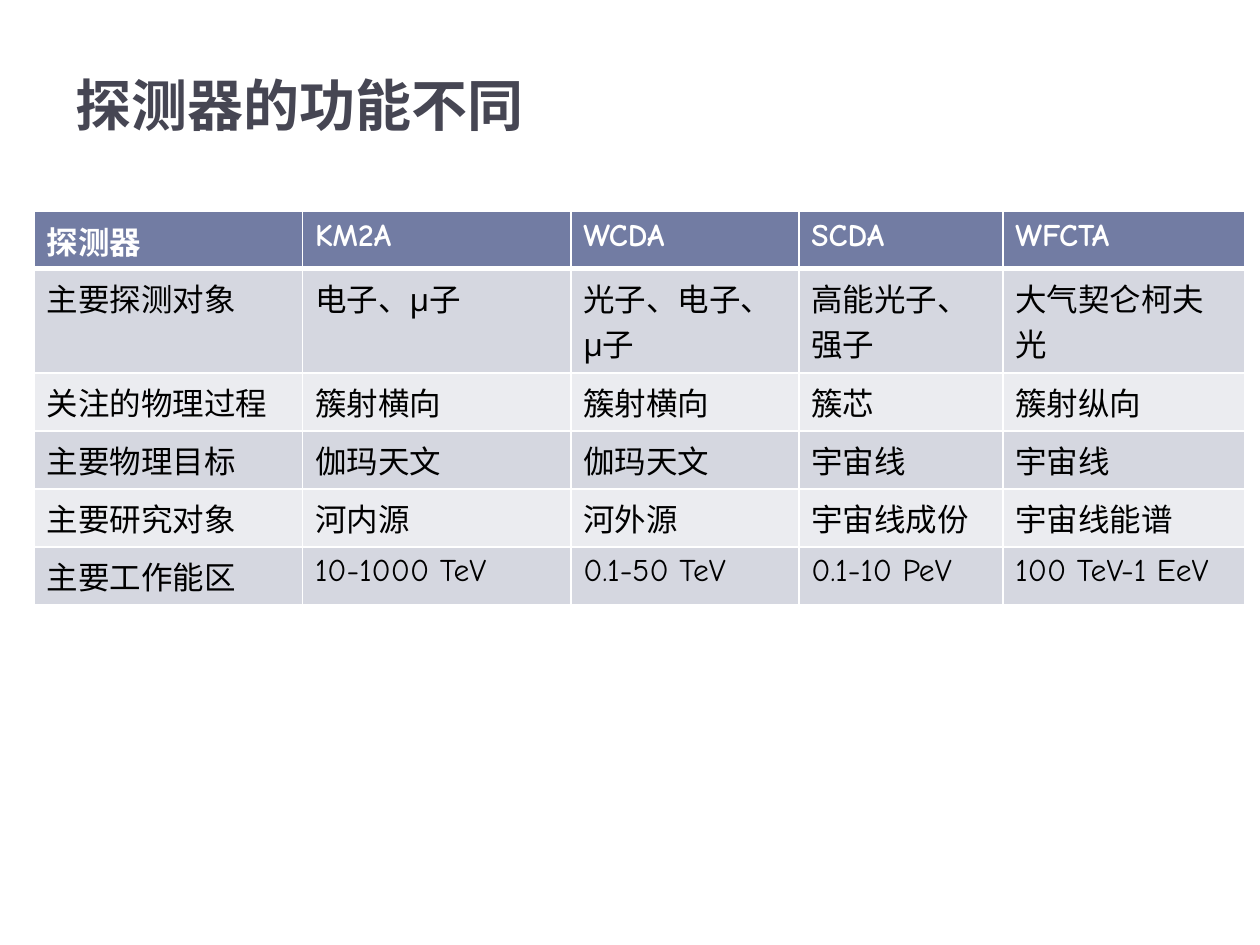
from lxml import etree
from pptx import Presentation
from pptx import util as u
from pptx.dml.color import RGBColor
from pptx.enum import text
from pptx.oxml import ns

INK = RGBColor(0x46, 0x46, 0x53)
HEAD = RGBColor(0x72, 0x7C, 0xA3)
DARK = RGBColor(0xD5, 0xD7, 0xE0)
PALE = RGBColor(0xEB, 0xEC, 0xF0)
WHITE = RGBColor(0xFF, 0xFF, 0xFF)
BLACK = RGBColor(0, 0, 0)
FONT = "Comic Neue"
COLS = [2.13, 2.13, 1.81, 1.62, 1.92]
ROWS = [0.45, 0.83] + [0.46] * 4
DATA = [
    ["探测器", "KM2A", "WCDA", "SCDA", "WFCTA"],
    ["主要探测对象", "电子、μ子", "光子、电子、μ子", "高能光子、强子", "大气契仑柯夫光"],
    ["关注的物理过程", "簇射横向", "簇射横向", "簇芯", "簇射纵向"],
    ["主要物理目标", "伽玛天文", "伽玛天文", "宇宙线", "宇宙线"],
    ["主要研究对象", "河内源", "河外源", "宇宙线成份", "宇宙线能谱"],
    ["主要工作能区", "10-1000 TeV", "0.1-50 TeV", "0.1-10 PeV", "100 TeV-1 EeV"],
]


def style(para, size, color, bold):
    font = para.font
    font.name, font.size, font.bold = FONT, u.Pt(size), bold
    font.color.rgb = color


def edge(cell, side, width):
    props = cell._tc.get_or_add_tcPr()
    line = etree.SubElement(props, ns.qn("a:ln" + side), w=str(u.Pt(width)))
    fill = etree.SubElement(line, ns.qn("a:solidFill"))
    etree.SubElement(fill, ns.qn("a:srgbClr"), val=str(WHITE))


deck = Presentation()
deck.slide_width, deck.slide_height = u.Inches(10), u.Inches(7.5)
slide = deck.slides.add_slide(deck.slide_layouts[6])

# Title
title = slide.shapes.add_textbox(u.Inches(0.5), u.Inches(0.06), u.Inches(9), u.Inches(1.08))
frame = title.text_frame
frame.word_wrap = True
frame.vertical_anchor = text.MSO_ANCHOR.BOTTOM
frame.text = "探测器的功能不同"
style(frame.paragraphs[0], 32, INK, True)

# Table grid
grid = slide.shapes.add_table(
    len(DATA), len(COLS), u.Inches(0.27), u.Inches(1.68),
    u.Inches(sum(COLS)), u.Inches(sum(ROWS))).table
for col, width in zip(grid.columns, COLS):
    col.width = u.Inches(width)
for row, height in zip(grid.rows, ROWS):
    row.height = u.Inches(height)

# Cells: header, then alternating bands
for r, words in enumerate(DATA):
    top = r == 0
    for c, word in enumerate(words):
        cell = grid.cell(r, c)
        cell.text = word
        style(cell.text_frame.paragraphs[0], 18, WHITE if top else BLACK, top)
        for side in "LRTB":
            thick = (top and side == "B") or (r == 1 and side == "T")
            edge(cell, side, 3 if thick else 1)
        cell.fill.solid()
        cell.fill.fore_color.rgb = HEAD if top else DARK if r % 2 else PALE

deck.save("out.pptx")
